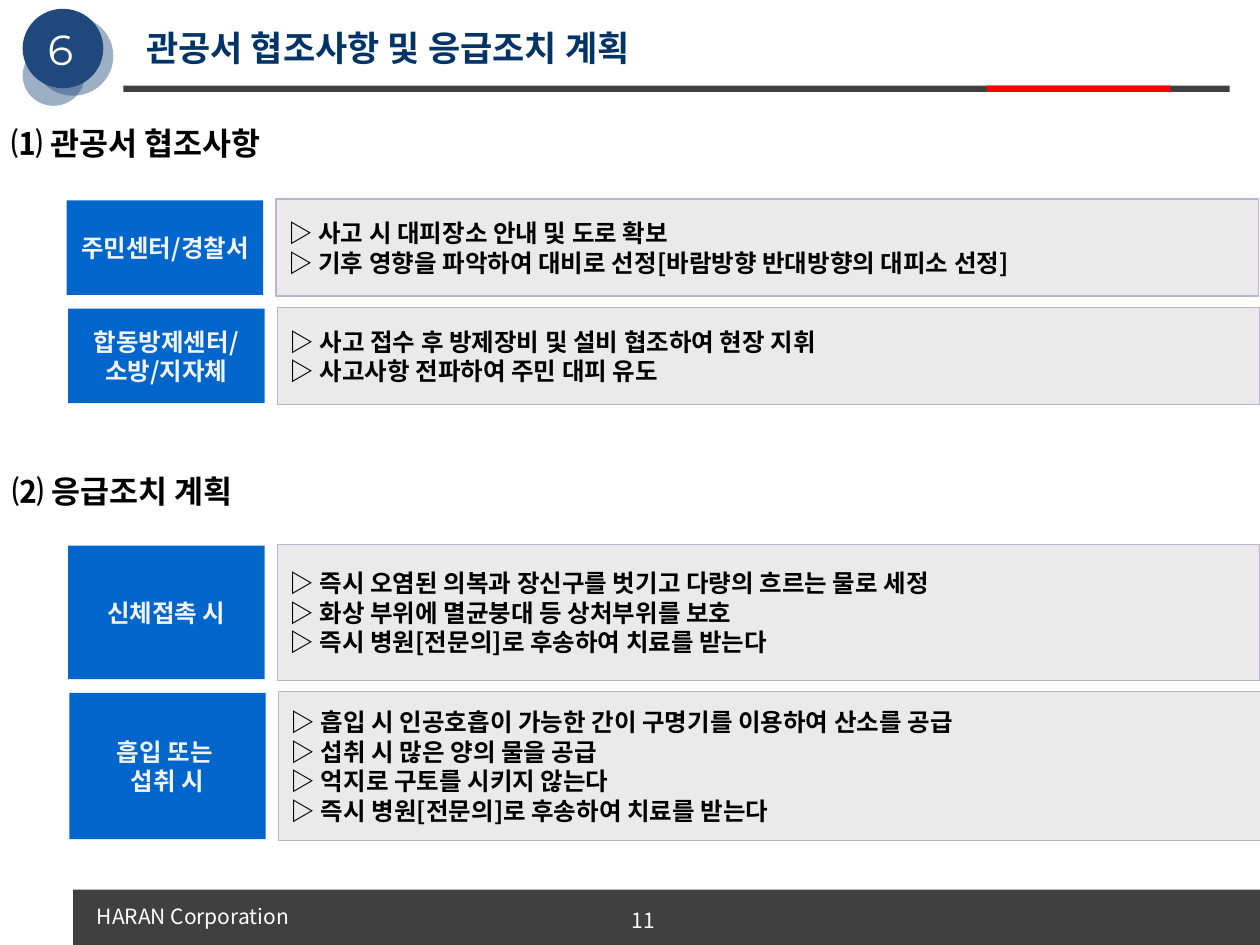
from lxml import etree
from pptx import Presentation
from pptx.dml.color import RGBColor
from pptx.enum import shapes, text
from pptx.oxml import ns
from pptx.util import Inches, Pt


class Theme:
    font, number_font = "Noto Sans CJK KR", "Montserrat"
    navy, title, blue = "1F497D", "003366", "0066CC"
    dark, red, panel, border = "404040", "FF0000", "EAEAEA", "BFB2D0"
    black, white, label = "000000", "FFFFFF", "F2F2F2"
    title_size, heading_size, body_size = 20, 18, 14
    footer_size, number_size = 12, 24
    line_height = 1.2


def add_box(kind, left, top, width, height, fill=None, line=None, alpha=None):
    box = page.shapes.add_shape(kind, Inches(left), Inches(top), Inches(width), Inches(height))
    box.shadow.inherit = False
    if fill:
        box.fill.solid()
        box.fill.fore_color.rgb = RGBColor.from_string(fill)
    else:
        box.fill.background()
    if line:
        box.line.color.rgb = RGBColor.from_string(line)
        box.line.width = Pt(0.75)
    else:
        box.line.fill.background()
    if alpha:
        color = box.fill._xPr.find(".//" + ns.qn("a:srgbClr"))
        etree.SubElement(color, ns.qn("a:alpha"), val=str(alpha * 1000))
    return box


def write(box, lines, size, color, bold=False, align=text.PP_ALIGN.LEFT,
          anchor=text.MSO_ANCHOR.MIDDLE, wrap=True, font=Theme.font):
    """Fill a shape with one paragraph per line and format its runs."""
    frame = box.text_frame
    frame.text = "\n".join(lines)
    frame.word_wrap = wrap
    frame.vertical_anchor = anchor
    for para in frame.paragraphs:
        para.alignment = align
        if font == Theme.font:
            para.line_spacing = Pt(round(size * Theme.line_height, 1))
        for span in para.runs:
            span.font.name = font
            span.font.size = Pt(size)
            span.font.bold = bold
            span.font.color.rgb = RGBColor.from_string(color)
            latin = span.font._element.find(ns.qn("a:latin"))
            east_asian = etree.Element(ns.qn("a:ea"), typeface=font)
            latin.addnext(east_asian)


deck = Presentation()
deck.slide_width, deck.slide_height = Inches(10), Inches(7.5)
page = deck.slides.add_slide(deck.slide_layouts[5])
RECT = shapes.MSO_SHAPE.RECTANGLE
OVAL = shapes.MSO_SHAPE.OVAL
ROUNDED = shapes.MSO_SHAPE.ROUNDED_RECTANGLE
TOP = text.MSO_ANCHOR.TOP
CENTER = text.PP_ALIGN.CENTER

# Footer bar, title rule and number badge
add_box(RECT, 0.58, 7.06, 9.47, 0.45, Theme.dark)
add_box(RECT, 0.98, 0.68, 8.78, 0.05, Theme.dark)
add_box(RECT, 7.83, 0.68, 1.46, 0.05, Theme.red)
add_box(OVAL, 0.18, 0.07, 0.64, 0.63, Theme.navy)
add_box(OVAL, 0.26, 0.13, 0.64, 0.63, Theme.navy, alpha=44)
add_box(OVAL, 0.18, 0.36, 0.49, 0.48, Theme.navy, alpha=44)

title = page.shapes.title
title.left, title.top = Inches(1.06), Inches(0.16)
title.width, title.height = Inches(8.13), Inches(0.71)
write(title, ["관공서 협조사항 및 응급조치 계획"], Theme.title_size, Theme.title, True, anchor=TOP)

company = page.shapes.add_textbox(Inches(0.67), Inches(7.07), Inches(2.01), Inches(0.4))
write(company, ["HARAN Corporation"], Theme.footer_size, Theme.white)
page_number = page.shapes.add_textbox(Inches(3.94), Inches(7.15), Inches(2.33), Inches(0.4))
write(page_number, ["11"], Theme.footer_size, Theme.white, align=CENTER, anchor=TOP)
badge = page.shapes.add_textbox(Inches(0.28), Inches(0.14), Inches(0.42), Inches(0.53))
write(badge, ["6"], Theme.number_size, Theme.white, anchor=TOP, font=Theme.number_font)

# Section headings: left, top, wording
for left, top, heading in [(-0.04, 0.8, "⑴ 관공서 협조사항"), (-0.03, 3.56, "⑵ 응급조치 계획")]:
    box = add_box(ROUNDED, left, top, 10.9, 0.67)
    write(box, [heading], Theme.heading_size, Theme.black, True)

# Rows: label left, panel top, panel height, label lines, panel lines
rows = [
    (0.53, 1.58, 0.77, ["주민센터/경찰서"],
     ["사고 시 대피장소 안내 및 도로 확보",
      "기후 영향을 파악하여 대비로 선정[바람방향 반대방향의 대피소 선정]"]),
    (0.54, 2.44, 0.77, ["합동방제센터/", "소방/지자체"],
     ["사고 접수 후 방제장비 및 설비 협조하여 현장 지휘",
      "사고사항 전파하여 주민 대피 유도"]),
    (0.54, 4.32, 1.08, ["신체접촉 시"],
     ["즉시 오염된 의복과 장신구를 벗기고 다량의 흐르는 물로 세정",
      "화상 부위에 멸균붕대 등 상처부위를 보호",
      "즉시 병원[전문의]로 후송하여 치료를 받는다"]),
    (0.55, 5.49, 1.18, ["흡입 또는 ", "섭취 시"],
     ["흡입 시 인공호흡이 가능한 간이 구명기를 이용하여 산소를 공급",
      "섭취 시 많은 양의 물을 공급",
      "억지로 구토를 시키지 않는다",
      "즉시 병원[전문의]로 후송하여 치료를 받는다"]),
]
for left, top, height, label_lines, actions in rows:
    panel = add_box(RECT, left + 1.66, top, 7.8, height, Theme.panel, Theme.border)
    write(panel, ["▷ " + action for action in actions], Theme.body_size, Theme.black, True)
    label = add_box(RECT, left, top + 0.01, 1.56, height - 0.02, Theme.blue)
    write(label, label_lines, Theme.body_size, Theme.label, True, CENTER, wrap=False)

deck.save("out.pptx")
